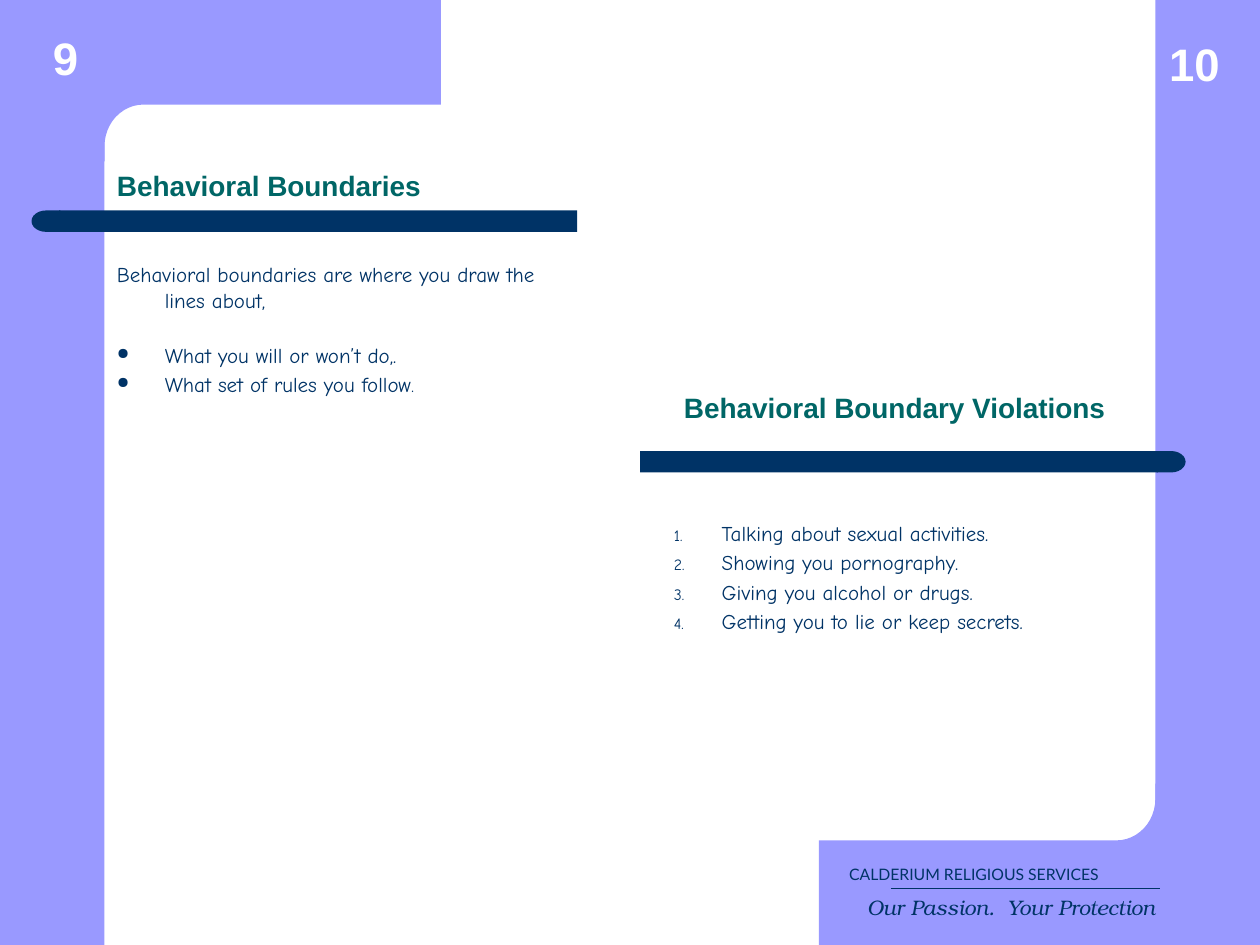
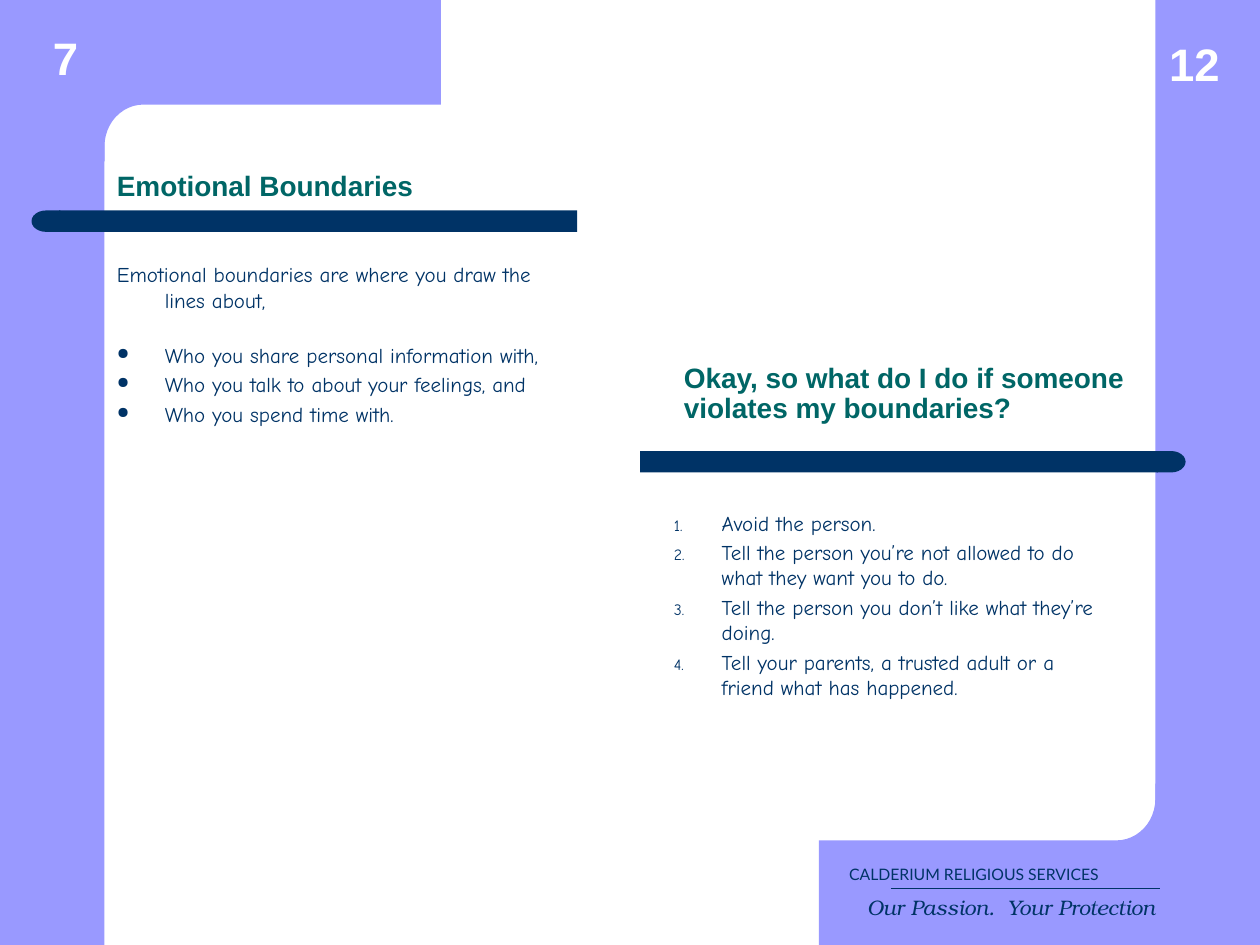
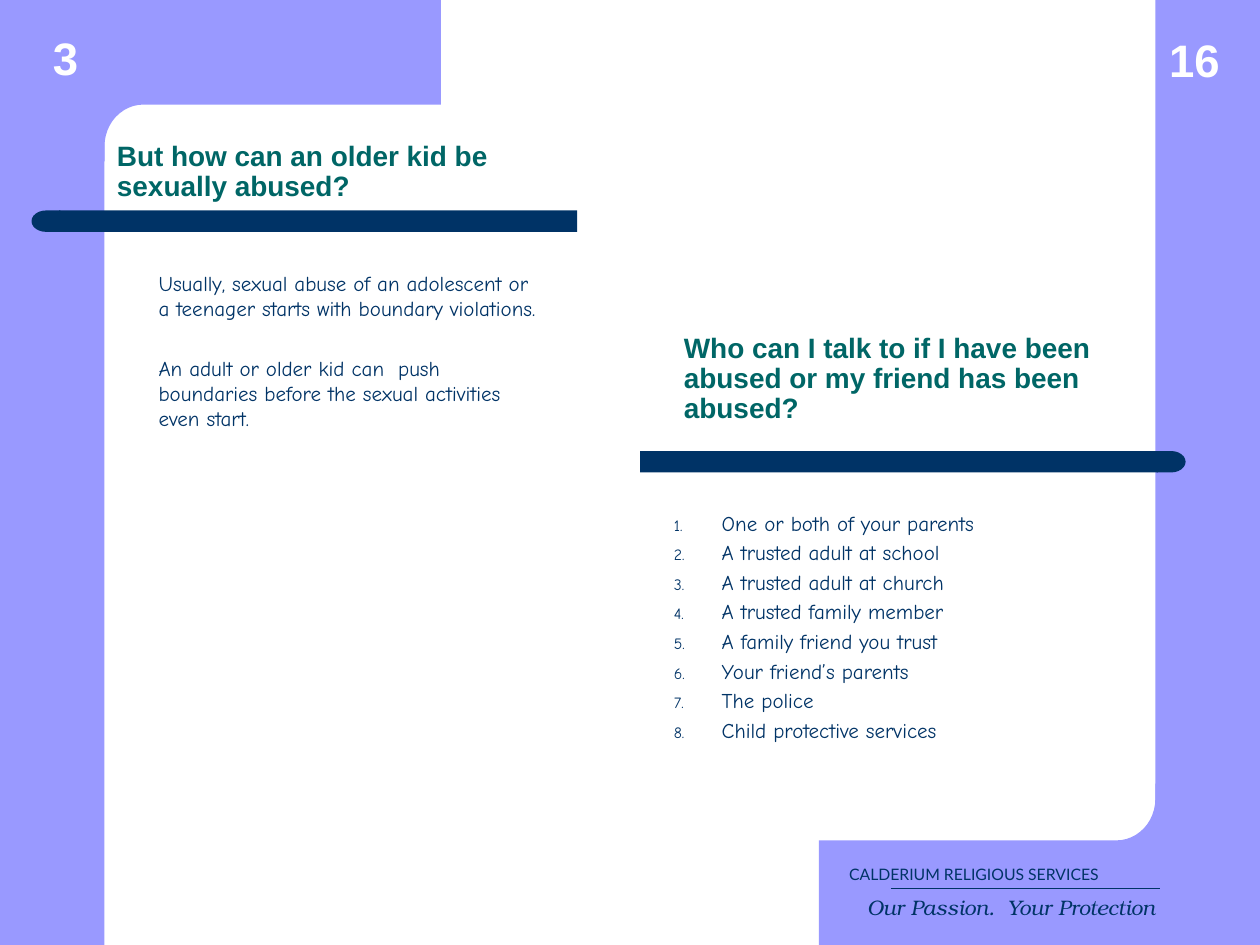
from math import cos, pi, sin

from lxml import etree
from pptx import Presentation
from pptx.dml.color import RGBColor
from pptx.enum.shapes import MSO_CONNECTOR, MSO_SHAPE
from pptx.enum.text import MSO_ANCHOR, PP_ALIGN
from pptx.oxml.ns import qn
from pptx.util import Inches, Pt

RECTANGLE, BAR_END = MSO_SHAPE.RECTANGLE, MSO_SHAPE.FLOWCHART_DELAY
STRAIGHT = MSO_CONNECTOR.STRAIGHT
TOP, MIDDLE, BOTTOM = MSO_ANCHOR.TOP, MSO_ANCHOR.MIDDLE, MSO_ANCHOR.BOTTOM
LEFT, CENTER, RIGHT = PP_ALIGN.LEFT, PP_ALIGN.CENTER, PP_ALIGN.RIGHT

PAGE_WIDTH, PAGE_HEIGHT = 10, 7.5
LAVENDER, NAVY, TEAL, WHITE = "9999FF", "003366", "006666", "FFFFFF"
HEADING_FONT, BODY_FONT = "Arial", "Comic Neue"
COMPANY_FONT, MOTTO_FONT = "Lato", "TeX Gyre Bonum"
BODY_SIZE, HANG = 12, 0.38
ITEM_GAP, INTRO_GAP, PARAGRAPH_GAP = 2.5, 17, 19.5
BULLET = ("a:buChar", {"char": "●"})
NUMBER = ("a:buAutoNum", {"type": "arabicPeriod"})


def color(hex_code):
    """Turn a hex string into a colour."""
    return RGBColor.from_string(hex_code)


def paint(shape, hex_code):
    """Give a shape a flat fill with no line or shadow."""
    shape.shadow.inherit = False
    shape.fill.solid()
    shape.fill.fore_color.rgb = color(hex_code)
    shape.line.fill.background()


def add_block(slide, kind, left, top, width, height, fill):
    """Add a plain filled preset shape."""
    block = slide.shapes.add_shape(
        kind, Inches(left), Inches(top), Inches(width), Inches(height))
    paint(block, fill)
    return block


def add_frame(slide, left, top, width, height, anchor=TOP):
    """Add a wrapping text box and return its text frame."""
    frame = slide.shapes.add_textbox(
        Inches(left), Inches(top), Inches(width), Inches(height)).text_frame
    frame.word_wrap = True
    frame.vertical_anchor = anchor
    return frame


def add_run(paragraph, text, size, font, hex_code, bold=False, italic=False):
    """Append one styled run to a paragraph."""
    run = paragraph.add_run()
    run.text = text
    run.font.size = Pt(size)
    run.font.name = font
    run.font.color.rgb = color(hex_code)
    run.font.bold = bold
    run.font.italic = italic


def add_line_of_text(slide, box, text, style, anchor=TOP, align=LEFT, spacing=1.0):
    """Add a text box that holds one paragraph."""
    paragraph = add_frame(slide, *box, anchor).paragraphs[0]
    paragraph.alignment = align
    paragraph.line_spacing = spacing
    add_run(paragraph, text, **style)


def indent(paragraph, first_line):
    """Indent a paragraph by the hang, with its own first-line offset."""
    properties = paragraph._p.get_or_add_pPr()
    properties.set("marL", str(Inches(HANG)))
    properties.set("indent", str(Inches(first_line)))
    return properties


def add_marker(properties, marker):
    """Put a small navy bullet or number on a paragraph."""
    bullet_color = etree.SubElement(properties, qn("a:buClr"))
    etree.SubElement(bullet_color, qn("a:srgbClr"), val=NAVY)
    etree.SubElement(properties, qn("a:buSzPct"), val="75000")
    tag, attributes = marker
    etree.SubElement(properties, qn(tag), attributes)


def add_paragraph(frame, text, first_line=-HANG, gap=0, marker=None):
    """Add a body paragraph, using the empty first one if it is free."""
    first = frame.paragraphs[0]
    paragraph = frame.add_paragraph() if first.runs else first
    properties = indent(paragraph, first_line)
    paragraph.space_before = Pt(gap)
    if marker:
        add_marker(properties, marker)
    add_run(paragraph, text, BODY_SIZE, BODY_FONT, NAVY)
    return paragraph


def add_items(frame, items, marker, first_gap=0):
    """Add a list and return its last paragraph."""
    for position, item in enumerate(items):
        gap = ITEM_GAP if position else first_gap
        last = add_paragraph(frame, item, gap=gap, marker=marker)
    return last


def corner_outline():
    """Return the outline of the top left band with its rounded inner corner."""
    steps = 12
    angles = [pi / 2 * step / steps for step in range(steps + 1)]
    curve = [(1.14 - 0.31 * sin(a), 1.16 - 0.33 * cos(a)) for a in angles]
    return [(0.5, 0), (3.5, 0), (3.5, 0.83), *curve, (0.83, 1.28), (0.5, 1.28)]


def add_corner(slide, outline):
    """Draw a lavender corner band."""
    points = [(Inches(x), Inches(y)) for x, y in outline]
    builder = slide.shapes.build_freeform(*points[0], scale=1.0)
    builder.add_line_segments(points[1:], close=True)
    paint(builder.convert_to_shape(), LAVENDER)


def add_bands(slide):
    """Draw the side bands, their corners and the two title bars."""
    corner = corner_outline()
    opposite = [(PAGE_WIDTH - x, PAGE_HEIGHT - y) for x, y in corner]
    for left, outline in ((0, corner), (9.17, opposite)):
        add_block(slide, RECTANGLE, left, 0, 0.83, PAGE_HEIGHT, LAVENDER)
        add_corner(slide, outline)
    for bar_left, end_left, top, turn in ((0.47, 0.25, 1.67, 180), (5.08, 9.18, 3.58, 0)):
        add_block(slide, RECTANGLE, bar_left, top, 4.11, 0.17, NAVY)
        add_block(slide, BAR_END, end_left, top, 0.23, 0.17, NAVY).rotation = turn


def add_footer(slide):
    """Add the company name, the rule and the motto."""
    company = {"size": 9, "font": COMPANY_FONT, "hex_code": NAVY}
    add_line_of_text(slide, (6.64, 6.74, 2.65, 0.39),
                     "CALDERIUM RELIGIOUS SERVICES", company, MIDDLE)
    rule = slide.shapes.add_connector(
        STRAIGHT, Inches(7.07), Inches(7.05), Inches(9.21), Inches(7.05))
    rule.line.color.rgb = color(NAVY)
    rule.line.width = Pt(0.75)
    etree.SubElement(rule._element.spPr, qn("a:effectLst"))
    motto = {"size": 12, "font": MOTTO_FONT, "hex_code": NAVY, "italic": True}
    add_line_of_text(slide, (6.55, 7.05, 2.72, 0.3),
                     "Our Passion.  Your Protection", motto, align=RIGHT)


def add_heading(slide, box, text):
    """Add a teal heading that stands on its bar."""
    style = {"size": 16, "font": HEADING_FONT, "hex_code": TEAL, "bold": True}
    add_line_of_text(slide, box, text, style, BOTTOM, spacing=0.9)


def add_page_number(slide, left, top, number):
    """Add a white page number on a side band."""
    style = {"size": 26, "font": HEADING_FONT, "hex_code": WHITE, "bold": True}
    add_line_of_text(slide, (left, top, 0.64, 0.53), number, style, BOTTOM, CENTER)


def add_spread(deck, left_page, left_title, right_page, right_title, right_number_top=0.24):
    """Add a slide with two facing pages, their titles and numbers."""
    slide = deck.slides.add_slide(deck.slide_layouts[6])
    add_bands(slide)
    add_footer(slide)
    add_heading(slide, (0.83, 0.83, 3.67, 0.83), left_title)
    add_page_number(slide, 0.2, 0.19, left_page)
    add_heading(slide, (5.33, 2.33, 3.84, 1.09), right_title)
    add_page_number(slide, 9.16, right_number_top, right_page)
    return slide


def add_definition(slide, intro, items):
    """Fill the left page with an introduction and bullets."""
    frame = add_frame(slide, 0.83, 2.03, 3.67, 1.47)
    add_paragraph(frame, intro)
    return add_items(frame, items, BULLET, INTRO_GAP)


def add_explanation(slide, paragraphs):
    """Fill the left page with indented plain paragraphs."""
    frame = add_frame(slide, 0.78, 2.1, 3.58, 4.24)
    for position, text in enumerate(paragraphs):
        add_paragraph(frame, text, 0, PARAGRAPH_GAP if position else 0)


def add_numbered_list(slide, items, top=4, height=2.42):
    """Fill the right page with a numbered list."""
    add_items(add_frame(slide, 5.25, top, 3.67, height), items, NUMBER)


def main():
    """Build the three spreads."""
    deck = Presentation()
    deck.slide_width, deck.slide_height = Inches(PAGE_WIDTH), Inches(PAGE_HEIGHT)

    behavioral = add_spread(deck, "9", "Behavioral Boundaries",
                            "10", "Behavioral Boundary Violations")
    last_rule = add_definition(
        behavioral, "Behavioral boundaries are where you draw the lines about,",
        ["What you will or won’t do,.", "What set of rules you follow"])
    add_run(last_rule, ".", 10, BODY_FONT, NAVY)
    add_numbered_list(behavioral, [
        "Talking about sexual activities.",
        "Showing you pornography.",
        "Giving you alcohol or drugs.",
        "Getting you to lie or keep secrets.",
    ], top=4.08, height=1.67)

    emotional = add_spread(deck, "7", "Emotional Boundaries", "12",
                           "Okay, so what do I do if someone violates my boundaries?")
    add_definition(
        emotional, "Emotional boundaries are where you draw the lines about,",
        ["Who you share personal information with,",
         "Who you talk to about your feelings, and",
         "Who you spend time with."])
    add_numbered_list(emotional, [
        "Avoid the person.",
        "Tell the person you’re not allowed to do what they want you to do.",
        "Tell the person you don’t like what they’re doing.",
        "Tell your parents, a trusted adult or a friend what has happened.",
    ])

    support = add_spread(
        deck, "3", "But how can an older kid be sexually abused?", "16",
        "Who can I talk to if I have been abused or my friend has been abused?", 0.21)
    add_explanation(support, [
        "Usually, sexual abuse of an adolescent or a teenager starts with boundary violations.",
        "An adult or older kid can  push boundaries before the sexual activities even start.",
    ])
    add_numbered_list(support, [
        "One or both of your parents",
        "A trusted adult at school",
        "A trusted adult at church",
        "A trusted family member",
        "A family friend you trust",
        "Your friend’s parents",
        "The police",
        "Child protective services",
    ])

    deck.save("out.pptx")


if __name__ == "__main__":
    main()
